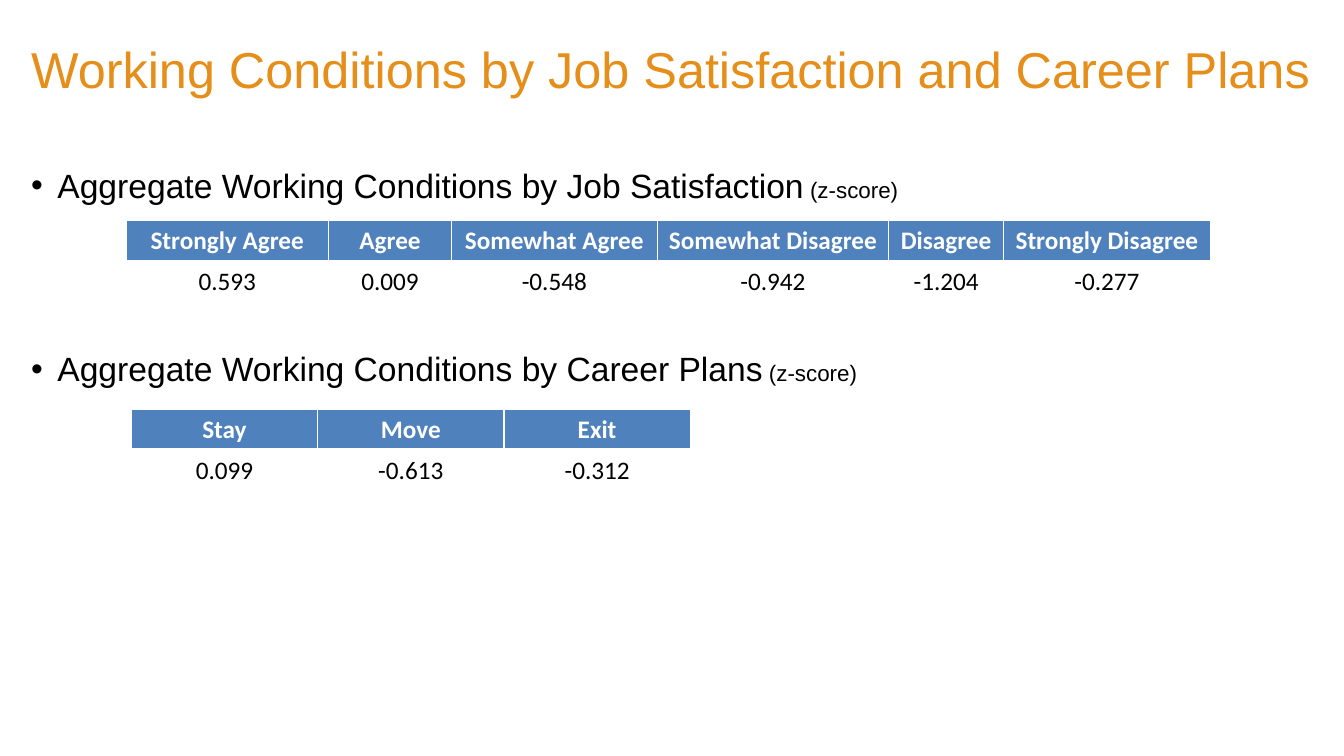
from pptx import Presentation
from pptx.dml.color import RGBColor
from pptx.enum import text
from pptx.oxml import parse_xml
from pptx.oxml.ns import nsdecls
from pptx.util import Pt

ORANGE = RGBColor(0xE5, 0x8E, 0x1A)
BLUE = RGBColor(0x4F, 0x81, 0xBD)
WHITE = RGBColor(0xFF, 0xFF, 0xFF)
BLACK = RGBColor(0, 0, 0)

TITLE = "Working Conditions by Job Satisfaction and Career Plans"
UNIT = " (z-score)"
POINTS = [
    "Aggregate Working Conditions by Job Satisfaction",
    "Aggregate Working Conditions by Career Plans",
]
# Left, top, then (label, score, column width)
TABLES = [
    (90, 157.7, [
        ("Strongly Agree", "0.593", 144.7),
        ("Agree", "0.009", 87.8),
        ("Somewhat Agree", "-0.548", 147),
        ("Somewhat Disagree", "-0.942", 165.4),
        ("Disagree", "-1.204", 82),
        ("Strongly Disagree", "-0.277", 147.8),
    ]),
    (93.8, 292.3, [
        ("Stay", "0.099", 133.1),
        ("Move", "-0.613", 133.1),
        ("Exit", "-0.312", 133.1),
    ]),
]
ROW = 29.2
LEFT, WIDTH = 15.1, 929
INDENT = 18.7
GAP = 102.4


def add_run(para, words, face, size, color, bold=False):
    run = para.add_run()
    run.text = words
    font = run.font
    font.name, font.size, font.bold = face, Pt(size), bold
    font.color.rgb = color


def place(holder, top, height):
    """Move a placeholder into the text column and return its text frame."""
    holder.left, holder.top = Pt(LEFT), Pt(top)
    holder.width, holder.height = Pt(WIDTH), Pt(height)
    frame = holder.text_frame
    frame.word_wrap = True
    frame.auto_size = text.MSO_AUTO_SIZE.NONE
    frame.margin_left, frame.margin_right = Pt(7.2), 0
    return frame


def set_bullet(para):
    props = para._p.get_or_add_pPr()
    props.set("marL", str(Pt(INDENT)))
    props.set("indent", str(-Pt(INDENT)))
    for tag in ('buFont %s typeface="Arial"', 'buChar %s char="•"'):
        props.append(parse_xml("<a:" + tag % nsdecls("a") + "/>"))


def set_edges(cell, widths):
    """Draw white cell borders; widths maps each side to points."""
    props = cell._tc.get_or_add_tcPr()
    for side, width in widths.items():
        props.append(parse_xml(
            f'<a:ln{side} {nsdecls("a")} w="{Pt(width)}"><a:solidFill>'
            f'<a:srgbClr val="{WHITE}"/></a:solidFill></a:ln{side}>'))


def fill_cell(cell, words, head):
    set_edges(cell, {"L": 1, "R": 1, "T": 1 if head else 3, "B": 3 if head else 1})
    if head:
        cell.fill.solid()
        cell.fill.fore_color.rgb = BLUE
    else:
        cell.fill.background()
    cell.vertical_anchor = text.MSO_ANCHOR.MIDDLE
    para = cell.text_frame.paragraphs[0]
    para.alignment = text.PP_ALIGN.CENTER
    add_run(para, words, "Calibri", 18, WHITE if head else BLACK, head)


def draw_table(slide, left, top, cols):
    total = sum(width for _, _, width in cols)
    table = slide.shapes.add_table(
        2, len(cols), Pt(left), Pt(top), Pt(total), Pt(2 * ROW)).table
    table.horz_banding = False
    for row in table.rows:
        row.height = Pt(ROW)
    for col, (label, score, width) in enumerate(cols):
        table.columns[col].width = Pt(width)
        fill_cell(table.cell(0, col), label, True)
        fill_cell(table.cell(1, col), score, False)


def main():
    deck = Presentation()
    deck.slide_width, deck.slide_height = Pt(960), Pt(540)
    slide = deck.slides.add_slide(deck.slide_layouts[1])

    frame = place(slide.shapes.title, 15.8, 66.2)
    frame.vertical_anchor = text.MSO_ANCHOR.MIDDLE
    para = frame.paragraphs[0]
    para.alignment = text.PP_ALIGN.LEFT
    add_run(para, TITLE, "Arial", 36, ORANGE)

    frame = place(slide.placeholders[1], 111.6, 378.7)
    frame.margin_top = Pt(6)
    for num, point in enumerate(POINTS):
        para = frame.add_paragraph() if num else frame.paragraphs[0]
        set_bullet(para)
        para.space_before = Pt(GAP if num else 0)
        add_run(para, point, "Arial", 24, BLACK)
        add_run(para, UNIT, "Arial", 16, BLACK)

    for left, top, cols in TABLES:
        draw_table(slide, left, top, cols)
    deck.save("out.pptx")


if __name__ == "__main__":
    main()
